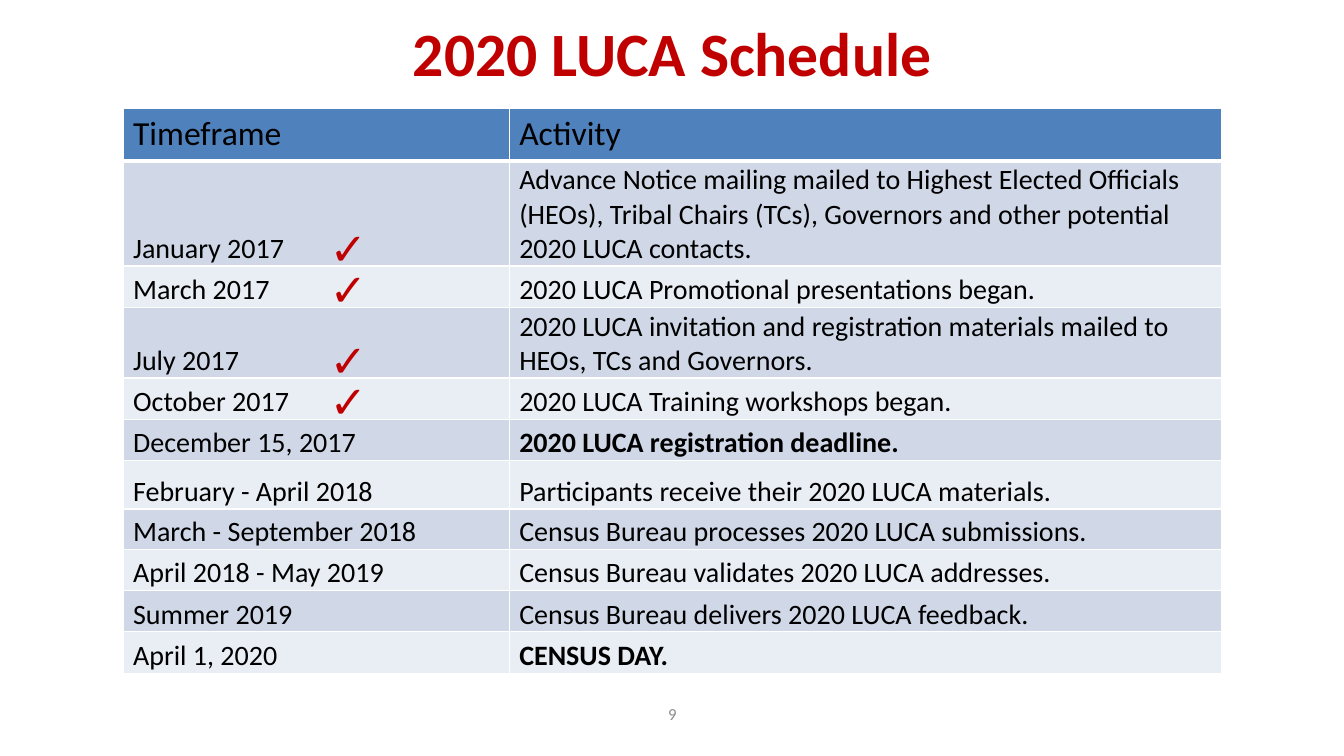
from itertools import accumulate

from lxml.etree import SubElement
from pptx import Presentation
from pptx.dml.color import RGBColor
from pptx.enum.text import MSO_ANCHOR, PP_ALIGN
from pptx.oxml.ns import qn
from pptx.util import Inches, Pt

COLORS = {
    "accent": "C00000",
    "text": "000000",
    "header": "4F81BD",
    "band_dark": "D0D8E8",
    "band_light": "E9EDF4",
    "border": "FFFFFF",
    "page_number": "8C8C8C",
}
FONT = "Calibri"
HEADINGS = ("Timeframe", "Activity")
# Timeframe, activity, row height, completed, emphasized
SCHEDULE = [
    ("January 2017",
     "Advance Notice mailing mailed to Highest Elected Officials (HEOs), "
     "Tribal Chairs (TCs), Governors and other potential 2020 LUCA contacts.",
     1.04, True, False),
    ("March 2017", "2020 LUCA Promotional presentations began.", 0.41, True, False),
    ("July 2017",
     "2020 LUCA invitation and registration materials mailed to HEOs, TCs and Governors.",
     0.7, True, False),
    ("October 2017", "2020 LUCA Training workshops began.", 0.41, True, False),
    ("December 15, 2017", "2020 LUCA registration deadline.", 0.41, False, True),
    ("February - April 2018", "Participants receive their 2020 LUCA materials.",
     0.48, False, False),
    ("March - September 2018", "Census Bureau processes 2020 LUCA submissions.",
     0.4, False, False),
    ("April 2018 - May 2019", "Census Bureau validates 2020 LUCA addresses.",
     0.41, False, False),
    ("Summer 2019", "Census Bureau delivers 2020 LUCA feedback.", 0.41, False, False),
    ("April 1, 2020", "CENSUS DAY.", 0.41, False, True),
]
HEADER_HEIGHT = 0.52
COLUMN_WIDTHS = (3.83, 7.07)


def write_text(text_frame, text, size, color, bold=False, align=PP_ALIGN.LEFT):
    text_frame.text = text
    paragraph = text_frame.paragraphs[0]
    paragraph.alignment = align
    font = paragraph.runs[0].font
    font.name, font.size, font.bold = FONT, Pt(size), bold
    font.color.rgb = RGBColor.from_string(COLORS[color])


def add_label(slide, box, text, size, color, anchor=MSO_ANCHOR.MIDDLE, **style):
    text_box = slide.shapes.add_textbox(*map(Inches, box))
    text_box.text_frame.word_wrap = True
    text_box.text_frame.vertical_anchor = anchor
    write_text(text_box.text_frame, text, size, color, **style)


def set_borders(cell, bottom_width):
    properties = cell._tc.get_or_add_tcPr()
    widths = {"a:lnL": 1, "a:lnR": 1, "a:lnT": 1, "a:lnB": bottom_width}
    for position, (tag, width) in enumerate(widths.items()):
        line = SubElement(properties, qn(tag), w=str(Pt(width)))
        fill = SubElement(line, qn("a:solidFill"))
        SubElement(fill, qn("a:srgbClr"), val=COLORS["border"])
        properties.insert(position, line)


def style_cell(cell, text, size, fill, bold=False, bottom_width=1):
    write_text(cell.text_frame, text, size, "text", bold)
    cell.fill.solid()
    cell.fill.fore_color.rgb = RGBColor.from_string(COLORS[fill])
    set_borders(cell, bottom_width)


def add_schedule(slide, left, top):
    heights = [HEADER_HEIGHT] + [entry[2] for entry in SCHEDULE]
    frame = slide.shapes.add_table(
        len(heights), len(COLUMN_WIDTHS), Inches(left), Inches(top),
        Inches(sum(COLUMN_WIDTHS)), Inches(sum(heights)))
    table = frame.table
    for column, width in zip(table.columns, COLUMN_WIDTHS):
        column.width = Inches(width)
    for row, height in zip(table.rows, heights):
        row.height = Inches(height)

    for column, heading in enumerate(HEADINGS):
        style_cell(table.cell(0, column), heading, 24, "header", bottom_width=3)

    row_bottoms = list(accumulate(heights, initial=top))[2:]
    for row, (entry, bottom) in enumerate(zip(SCHEDULE, row_bottoms), start=1):
        timeframe, activity, _, completed, emphasized = entry
        band = "band_dark" if row % 2 else "band_light"
        for column, text in enumerate((timeframe, activity)):
            cell = table.cell(row, column)
            cell.vertical_anchor = MSO_ANCHOR.BOTTOM
            cell.margin_left = Inches(0.1)
            cell.margin_top = cell.margin_right = Inches(0.01)
            cell.margin_bottom = 0
            style_cell(cell, text, 20, band, bold=emphasized and column == 1)
        if completed:
            add_label(slide, (left + 1.95, bottom - 0.5, 0.8, 0.64), "✓", 32,
                      "accent", anchor=MSO_ANCHOR.TOP)


def main():
    presentation = Presentation()
    presentation.slide_width = Inches(13.33)
    presentation.slide_height = Inches(7.5)
    slide = presentation.slides.add_slide(presentation.slide_layouts[6])
    add_label(slide, (2.17, 0.03, 9, 0.97), "2020 LUCA Schedule", 44, "accent",
              bold=True, align=PP_ALIGN.CENTER)
    add_schedule(slide, 1.22, 1.08)
    add_label(slide, (5.17, 6.88, 3, 0.4), "9", 12, "page_number",
              align=PP_ALIGN.CENTER)
    presentation.save("out.pptx")


if __name__ == "__main__":
    main()
